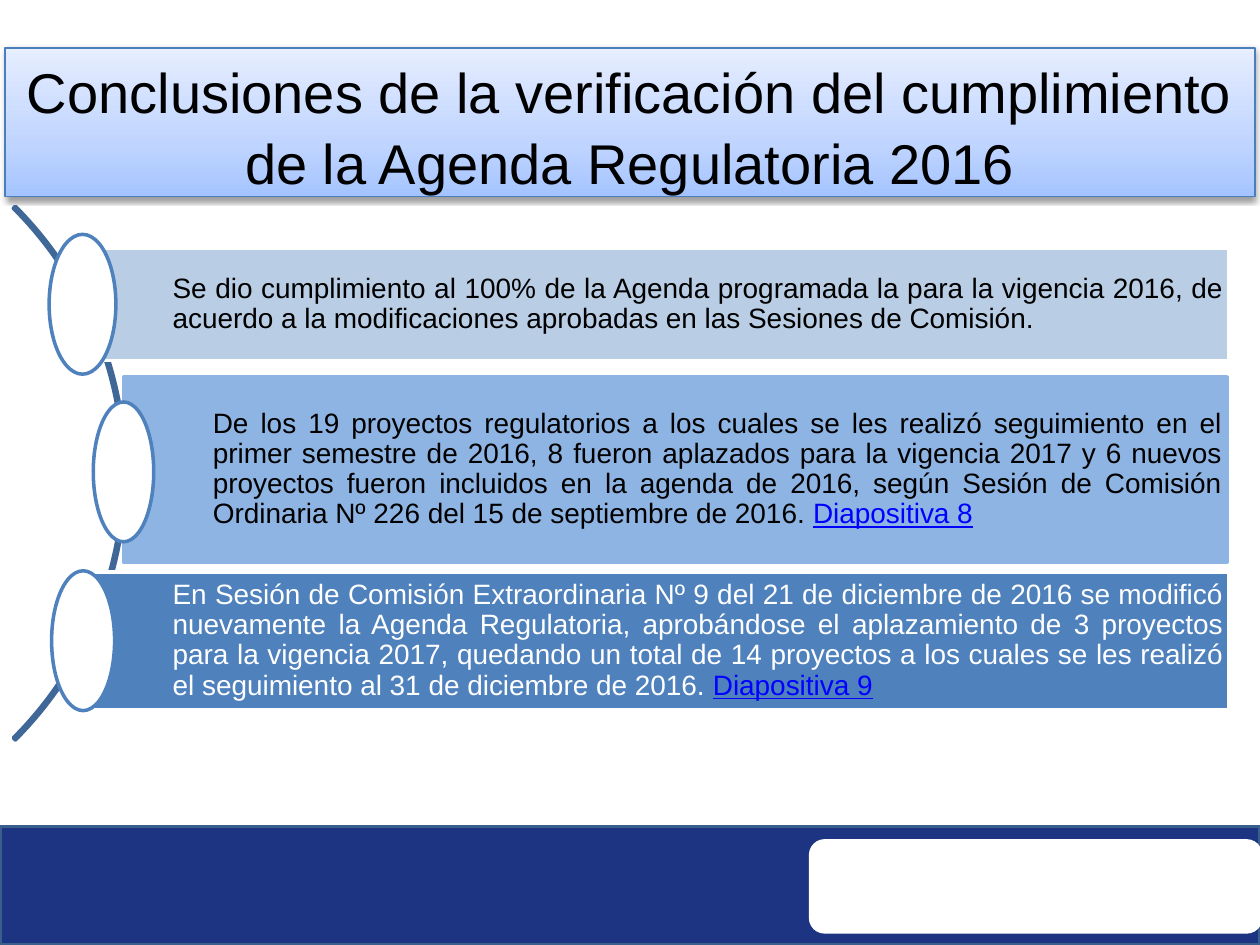
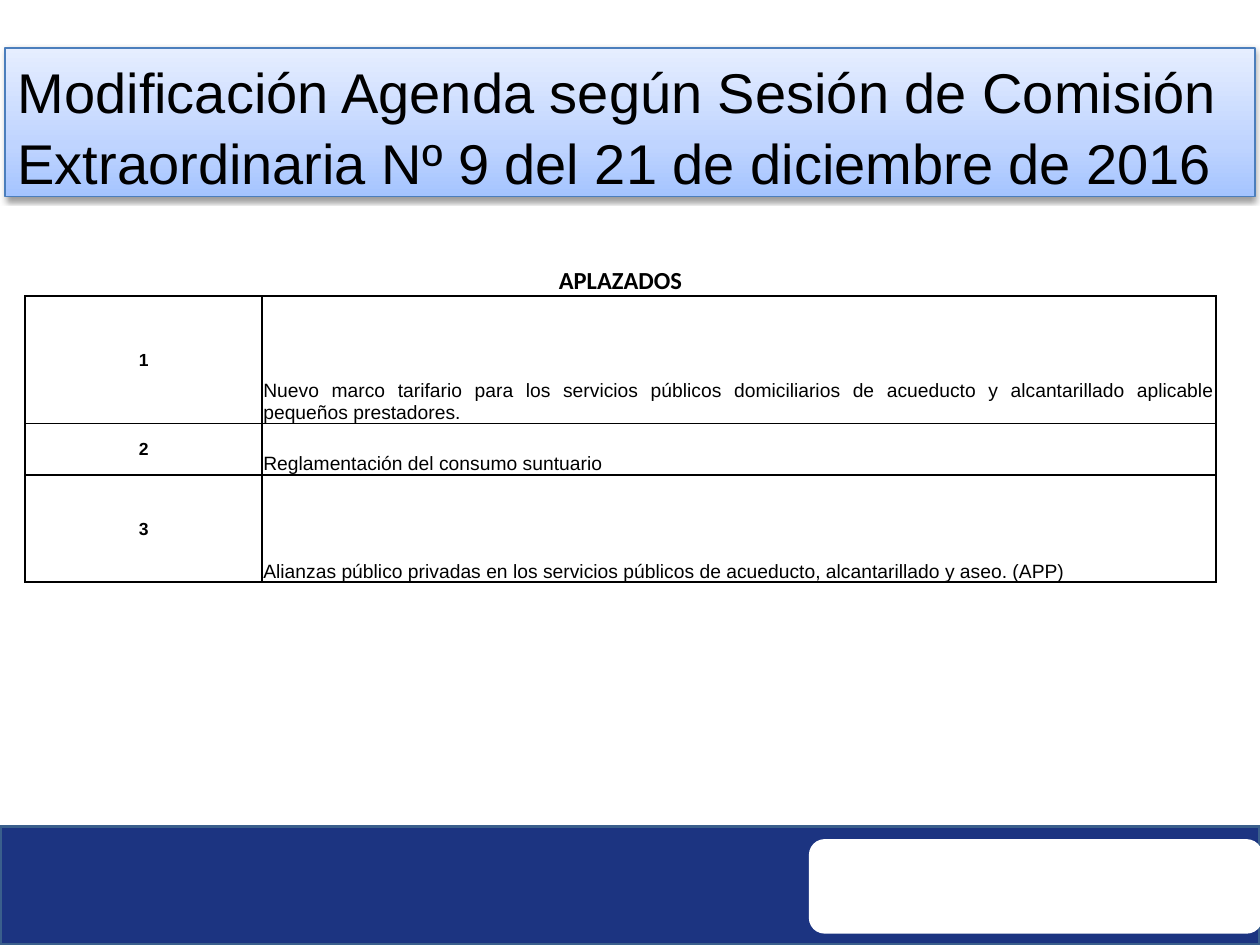
"""Build two slides on the fulfilment of the 2016 regulatory agenda."""
from dataclasses import dataclass

from lxml.etree import SubElement
from pptx import Presentation
from pptx.dml.color import RGBColor
from pptx.enum.shapes import MSO_SHAPE
from pptx.enum.text import MSO_ANCHOR, MSO_AUTO_SIZE, PP_ALIGN
from pptx.oxml.ns import qn
from pptx.util import Inches, Pt


@dataclass(frozen=True)
class Theme:
    """Colours, fonts and type sizes of the slides."""
    black: str = "000000"
    white: str = "FFFFFF"
    navy: str = "1C3481"
    navy_line: str = "3A5F8C"
    title_line: str = "4B7EBC"
    title_gradient: tuple = ((0, "A4C4FF"), (35, "BFD4FF"), (100, "E6EEFF"))
    arc: str = "3F6797"
    pale_blue: str = "B9CDE5"
    light_blue: str = "8EB4E3"
    blue: str = "4F81BD"
    reference: str = "0000FF"
    font: str = "Arial"
    heading_font: str = "Calibri"
    title_size: int = 32
    body_size: int = 16
    heading_size: int = 14
    cell_size: int = 11
    number_size: int = 10


class Deck:
    """Hold the style and the current slide."""

    def __init__(self, theme):
        """Start a presentation whose layout carries the footer."""
        self.theme = theme
        self.presentation = Presentation()
        self.presentation.slide_width = Inches(10)
        self.presentation.slide_height = Inches(7.5)
        self.layout = self.presentation.slide_layouts.get_by_name("Title Only")
        self.slide = None

    def add_slide(self, title, alignment):
        """Add a slide with its title band."""
        is_first = self.slide is None
        self.slide = self.presentation.slides.add_slide(self.layout)
        if is_first:
            self.add_footer()
        self.format_title(title, alignment)

    def add_footer(self):
        """Place the footer band and its panel on the layout."""
        theme = self.theme
        band = self.add_shape(MSO_SHAPE.RECTANGLE, (0, 6.56, 10, 0.94),
                              theme.navy, theme.navy_line)
        panel = self.add_shape(MSO_SHAPE.ROUNDED_RECTANGLE,
                               (6.42, 6.66, 3.6, 0.75), theme.white)
        for shape in (band, panel):
            self.layout.shapes.element.append(shape.element)

    def format_title(self, text, alignment):
        """Turn the title placeholder into a gradient band."""
        theme = self.theme
        title = self.slide.shapes.title
        self.place(title, (0.04, 0.38, 9.92, 1.18))
        properties = title.element.spPr
        gradient = SubElement(properties, qn("a:gradFill"), rotWithShape="1")
        stops = SubElement(gradient, qn("a:gsLst"))
        for position, color in theme.title_gradient:
            stop = SubElement(stops, qn("a:gs"), pos=str(position * 1000))
            SubElement(stop, qn("a:srgbClr"), val=color)
        SubElement(gradient, qn("a:lin"), ang="16200000", scaled="0")
        title.line.color.rgb = RGBColor.from_string(theme.title_line)
        title.line.width = Pt(0.75)
        effects = SubElement(properties, qn("a:effectLst"))
        shadow = SubElement(effects, qn("a:outerShdw"), blurRad=str(Pt(3.1)),
                            dist=str(Pt(1.6)), dir="5400000", rotWithShape="0")
        color = SubElement(shadow, qn("a:srgbClr"), val=theme.black)
        SubElement(color, qn("a:alpha"), val="38000")

        frame = title.text_frame
        frame.text = text
        frame.word_wrap = True
        frame.auto_size = MSO_AUTO_SIZE.SHAPE_TO_FIT_TEXT
        frame.vertical_anchor = MSO_ANCHOR.TOP
        paragraph = frame.paragraphs[0]
        paragraph.alignment = alignment
        paragraph.line_spacing = 1.05
        self.format_run(paragraph.runs[0], theme.title_size, theme.black)

    def place(self, shape, box):
        """Set the position and size of a shape in inches."""
        shape.left, shape.top, shape.width, shape.height = map(Inches, box)

    def format_run(self, run, size, color, bold=False, font=None):
        """Set the font of a run."""
        run.font.name = font or self.theme.font
        run.font.size = Pt(size)
        run.font.bold = bold
        run.font.color.rgb = RGBColor.from_string(color)

    def add_shape(self, kind, box, fill=None, line=None):
        """Add a flat preset shape."""
        shape = self.slide.shapes.add_shape(kind, *map(Inches, box))
        shape.shadow.inherit = False
        if fill:
            shape.fill.solid()
            shape.fill.fore_color.rgb = RGBColor.from_string(fill)
        else:
            shape.fill.background()
        if line:
            shape.line.color.rgb = RGBColor.from_string(line)
            shape.line.width = Pt(2)
        else:
            shape.line.fill.background()
        return shape

    def add_arc(self, box):
        """Add the thin arc that joins the conclusions."""
        arc = self.add_shape(MSO_SHAPE.BLOCK_ARC, box, line=self.theme.arc)
        for index, value in enumerate((189, 27, 0.004)):
            arc.adjustments[index] = value

    def add_conclusion(self, bar_box, oval_box, fill, line, color, text, reference=""):
        """Add a text bar with the oval at its left end."""
        theme = self.theme
        bar = self.add_shape(MSO_SHAPE.RECTANGLE, bar_box, fill, line)
        frame = bar.text_frame
        frame.word_wrap = True
        frame.vertical_anchor = MSO_ANCHOR.MIDDLE
        frame.margin_left = Inches(0.71)
        frame.margin_right = frame.margin_top = frame.margin_bottom = Inches(0.04)
        paragraph = frame.paragraphs[0]
        paragraph.text = text
        paragraph.alignment = PP_ALIGN.JUSTIFY
        paragraph.line_spacing = 0.9
        self.format_run(paragraph.runs[0], theme.body_size, color)
        if reference:
            paragraph.runs[0].text = text + " "
            run = paragraph.add_run()
            run.text = reference
            self.format_run(run, theme.body_size, theme.reference)
            run.font.underline = True
        self.add_shape(MSO_SHAPE.OVAL, oval_box, theme.white, theme.blue)

    def format_cell(self, cell, sides):
        """Set the margins, borders and empty fill of a cell."""
        cell.margin_left = cell.margin_right = cell.margin_top = Inches(0.01)
        cell.margin_bottom = 0
        properties = cell._tc.get_or_add_tcPr()
        for side in "LRTB":
            border = SubElement(properties, qn(f"a:ln{side}"), w=str(Pt(1)))
            if side in sides:
                fill = SubElement(border, qn("a:solidFill"))
                SubElement(fill, qn("a:srgbClr"), val=self.theme.black)
            else:
                SubElement(border, qn("a:noFill"))
        cell.fill.background()

    def write_cell(self, cell, text, size, alignment, anchor, bold=False, font=None):
        """Write formatted text in a cell."""
        cell.text_frame.text = text
        cell.vertical_anchor = anchor
        paragraph = cell.text_frame.paragraphs[0]
        paragraph.alignment = alignment
        self.format_run(paragraph.runs[0], size, self.theme.black, bold, font)

    def add_numbered_table(self, box, widths, heights, heading, items):
        """Add a table of numbered items below a merged heading."""
        theme = self.theme
        table = self.slide.shapes.add_table(
            len(heights), len(widths), *map(Inches, box)).table
        table.first_row = table.horz_banding = False
        for column, width in zip(table.columns, widths):
            column.width = Inches(width)
        for index, height in enumerate(heights):
            table.rows[index].height = Inches(height)
            for cell in table.rows[index].cells:
                self.format_cell(cell, "LRTB" if index else "B")
        table.cell(0, 0).merge(table.cell(0, 1))
        self.write_cell(table.cell(0, 0), heading, theme.heading_size,
                        PP_ALIGN.CENTER, MSO_ANCHOR.BOTTOM, True, theme.heading_font)
        for number, item in enumerate(items, start=1):
            self.write_cell(table.cell(number, 0), str(number), theme.number_size,
                            PP_ALIGN.CENTER, MSO_ANCHOR.MIDDLE, True)
            self.write_cell(table.cell(number, 1), item, theme.cell_size,
                            PP_ALIGN.JUSTIFY, MSO_ANCHOR.BOTTOM)


def add_conclusions_slide(deck):
    """Add the slide with the three conclusions."""
    theme = deck.theme
    deck.add_slide("Conclusiones de la verificación del cumplimiento "
                   "de la Agenda Regulatoria 2016", PP_ALIGN.CENTER)
    deck.add_arc((-4.99, 0.76, 5.99, 5.99))
    deck.add_conclusion(
        (0.66, 1.97, 9.09, 0.89), (0.39, 1.86, 0.53, 1.11),
        theme.pale_blue, theme.white, theme.black,
        "Se dio cumplimiento al 100% de la Agenda programada la para la vigencia "
        "2016, de acuerdo a la modificaciones aprobadas en las Sesiones de Comisión.")
    deck.add_conclusion(
        (0.98, 2.99, 8.76, 1.47), (0.74, 3.19, 0.48, 1.11),
        theme.light_blue, theme.light_blue, theme.black,
        "De los 19 proyectos regulatorios a los cuales se les realizó seguimiento "
        "en el primer semestre de 2016, 8 fueron aplazados para la vigencia 2017 y "
        "6 nuevos proyectos fueron incluidos en la agenda de 2016, según Sesión de "
        "Comisión Ordinaria Nº 226 del 15 de septiembre de 2016.", "Diapositiva 8")
    deck.add_conclusion(
        (0.66, 4.54, 9.09, 1.09), (0.41, 4.53, 0.5, 1.11),
        theme.blue, theme.white, theme.white,
        "En Sesión de Comisión Extraordinaria Nº 9 del 21 de diciembre de 2016 se "
        "modificó nuevamente la Agenda Regulatoria, aprobándose el aplazamiento de "
        "3 proyectos para la vigencia 2017, quedando un total de 14 proyectos a los "
        "cuales se les realizó el seguimiento al 31 de diciembre de 2016.",
        "Diapositiva 9")


def add_postponed_slide(deck):
    """Add the slide with the postponed projects."""
    deck.add_slide("Modificación Agenda según Sesión de Comisión Extraordinaria "
                   "Nº 9 del 21 de diciembre de 2016", PP_ALIGN.LEFT)
    deck.add_numbered_table(
        (0.2, 1.94, 9.45, 2.68), (1.88, 7.57), (0.41, 1.01, 0.41, 0.85), "APLAZADOS",
        ("Nuevo marco tarifario para los servicios públicos domiciliarios de "
         "acueducto y alcantarillado aplicable pequeños prestadores.",
         "Reglamentación del consumo suntuario",
         "Alianzas público privadas en los servicios públicos de acueducto, "
         "alcantarillado y aseo. (APP)"))


def main():
    """Build and save the presentation."""
    deck = Deck(Theme())
    add_conclusions_slide(deck)
    add_postponed_slide(deck)
    deck.presentation.save("out.pptx")


if __name__ == "__main__":
    main()
